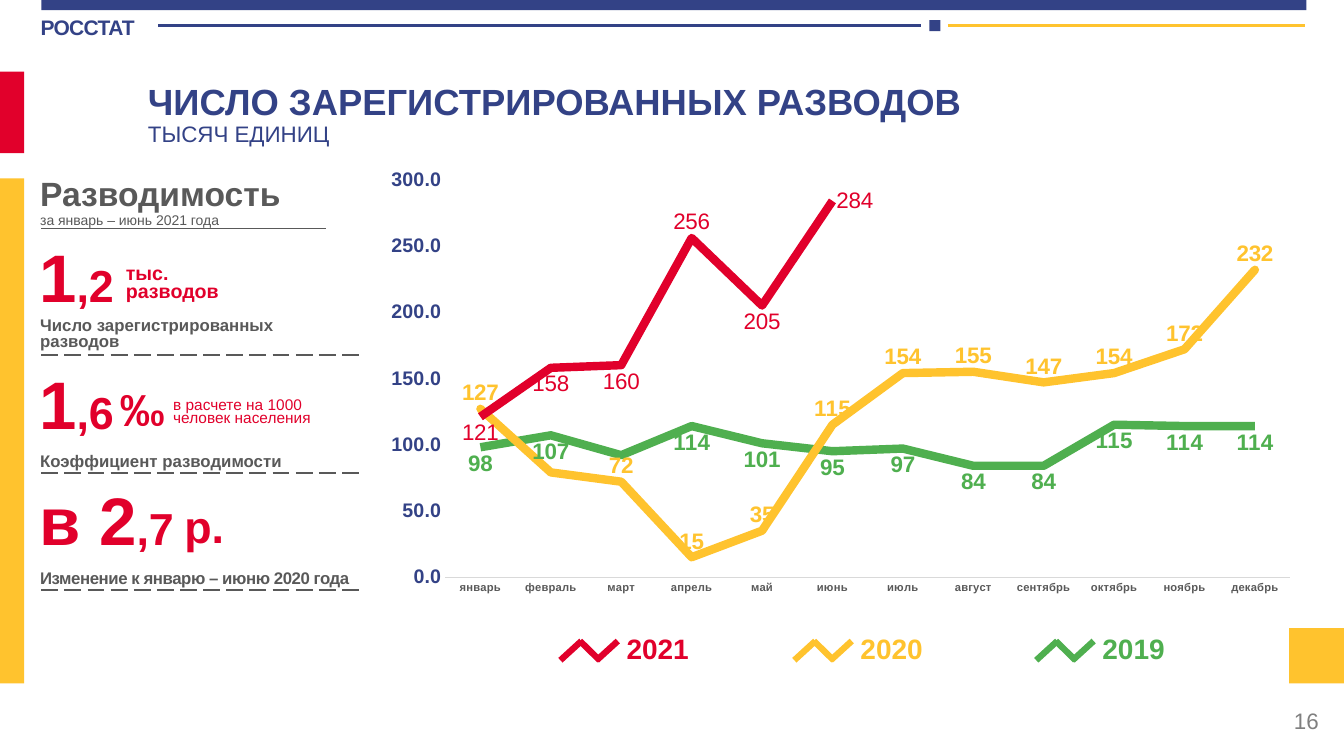
from dataclasses import dataclass

from lxml.etree import SubElement
from pptx import Presentation
from pptx.chart.data import CategoryChartData
from pptx.dml.color import RGBColor
from pptx.enum.chart import XL_CHART_TYPE, XL_LABEL_POSITION, XL_MARKER_STYLE, XL_TICK_MARK
from pptx.enum.dml import MSO_LINE
from pptx.enum.shapes import MSO_CONNECTOR, MSO_SHAPE
from pptx.enum.text import MSO_ANCHOR, PP_ALIGN
from pptx.oxml import parse_xml
from pptx.oxml.ns import nsdecls, qn
from pptx.util import Pt

NAVY = RGBColor(0x33, 0x42, 0x86)
RED = RGBColor(0xE1, 0x00, 0x2B)
GOLD = RGBColor(0xFF, 0xC3, 0x2E)
GREEN = RGBColor(0x4F, 0xAF, 0x4F)
DARK = RGBColor(0x59, 0x59, 0x59)
GREY = RGBColor(0x80, 0x80, 0x80)
PALE = RGBColor(0xD9, 0xD9, 0xD9)
FONT = "Arial"
BELOW, ABOVE, RIGHT = XL_LABEL_POSITION.BELOW, XL_LABEL_POSITION.ABOVE, XL_LABEL_POSITION.RIGHT


@dataclass
class Bar:
    x: float
    y: float
    w: float
    h: float
    color: RGBColor


@dataclass
class Row:
    """One paragraph; tail is a second, smaller run."""
    text: str
    size: float
    color: RGBColor
    bold: bool = True
    space: float = 1
    before: float = 0
    tail: str = ""
    track: int = 0
    align: PP_ALIGN = PP_ALIGN.LEFT


@dataclass
class Note:
    x: float
    y: float
    w: float
    h: float
    rows: list[Row]
    mid: bool = False
    wrap: bool = True
    inset: bool = True


@dataclass
class Year:
    name: str
    values: list
    color: RGBColor
    place: XL_LABEL_POSITION
    left: float
    bold: bool = True
    hidden: int | None = None


MONTHS = ["январь", "февраль", "март", "апрель", "май", "июнь", "июль",
          "август", "сентябрь", "октябрь", "ноябрь", "декабрь"]
YEARS = [
    Year("2019", [98, 107, 92, 114, 101, 95, 97, 84, 84, 115, 114, 114], GREEN, BELOW, 740.2, hidden=2),
    Year("2020", [127, 79, 72, 15, 35, 115, 154, 155, 147, 154, 172, 232], GOLD, ABOVE, 567.4, hidden=1),
    Year("2021", [121, 158, 160, 256, 205, 284] + [None] * 6, RED, BELOW, 400.3, bold=False),
]
MOVED = {3: ABOVE, 5: RIGHT}  # 2021 labels that do not sit below

BARS = [
    Bar(29.5, 0, 903.6, 7.2, NAVY),
    Bar(0, 51.1, 17.3, 58.3, RED),
    Bar(0, 127.4, 17.3, 360.7, GOLD),
    Bar(920.9, 448.6, 39.1, 39.6, GOLD),
    Bar(663.8, 14.4, 7.9, 7.9, NAVY),
]
NOTES = [
    Note(29, 10, 82, 23, [Row("РОССТАТ", 15, NAVY, track=-50)], inset=False),
    Note(733, 500.4, 216, 28.8, [Row("16", 16, GREY, False, align=PP_ALIGN.RIGHT)], mid=True),
    Note(98.6, 52.6, 845.3, 39.6, [
        Row("ЧИСЛО ЗАРЕГИСТРИРОВАННЫХ РАЗВОДОВ", 26, NAVY),
        Row("ТЫСЯЧ ЕДИНИЦ", 16, NAVY, False, 0.3, 10)]),
    Note(21.6, 126, 193, 29.5, [Row("Разводимость", 24, DARK, space=0.8)], mid=True),
    Note(21.6, 147.6, 144, 19.4, [Row("за январь – июнь 2021 года", 10, DARK, False)], wrap=False),
    Note(20.9, 175.7, 138.2, 42.5, [Row("1", 48, RED, tail=",2")], mid=True),
    Note(82.8, 185.8, 82.8, 34.6, [Row("тыс. разводов", 14, RED, space=0.8)]),
    Note(21.6, 224.6, 204.5, 29.5, [Row("Число зарегистрированных разводов", 12, DARK, space=0.8)], mid=True),
    Note(20.9, 266.4, 121.7, 42.5, [Row("1", 48, RED, tail=",6")], mid=True),
    Note(78.5, 269.3, 38.2, 46.1, [Row("‰", 32, RED)]),
    Note(116.6, 282.2, 115.9, 25.9, [Row("в расчете на 1000 человек населения", 11, RED, False, 0.7)]),
    Note(21.6, 321.1, 226.8, 19.4, [Row("Коэффициент разводимости", 12, DARK, space=0.8)], mid=True),
    Note(20.9, 349.2, 121.7, 42.5, [Row("в 2", 48, RED, tail=",7")], mid=True),
    Note(124.6, 352.8, 67, 46.1, [Row("р.", 32, RED)]),
    Note(21.6, 404.6, 249.8, 19.4,
         [Row("Изменение к январю – июню 2020 года", 12, DARK, space=0.8, track=-30)], mid=True),
]


def draw_bar(slide, bar: Bar) -> None:
    shape = slide.shapes.add_shape(MSO_SHAPE.RECTANGLE, Pt(bar.x), Pt(bar.y), Pt(bar.w), Pt(bar.h))
    shape.shadow.inherit = False
    shape.fill.solid()
    shape.fill.fore_color.rgb = bar.color
    shape.line.fill.background()


def draw_line(slide, x1: float, y1: float, x2: float, y2: float,
              color: RGBColor, width: float, dash: bool = False) -> None:
    line = slide.shapes.add_connector(MSO_CONNECTOR.STRAIGHT, Pt(x1), Pt(y1), Pt(x2), Pt(y2))
    line.line.color.rgb = color
    line.line.width = Pt(width)
    if dash:
        line.line.dash_style = MSO_LINE.LONG_DASH
    SubElement(line._element.spPr, qn("a:effectLst"))


def set_font(font, size: float, color: RGBColor, bold: bool) -> None:
    font.name, font.size, font.bold = FONT, Pt(size), bold
    font.color.rgb = color


def draw_note(slide, note: Note) -> None:
    frame = slide.shapes.add_textbox(Pt(note.x), Pt(note.y), Pt(note.w), Pt(note.h)).text_frame
    frame.word_wrap = note.wrap
    frame.vertical_anchor = MSO_ANCHOR.MIDDLE if note.mid else MSO_ANCHOR.TOP
    if not note.inset:
        frame.margin_left = frame.margin_right = frame.margin_top = frame.margin_bottom = 0
    for i, row in enumerate(note.rows):
        para = frame.add_paragraph() if i else frame.paragraphs[0]
        para.alignment = row.align
        para.line_spacing = row.space
        para.space_before = Pt(row.before)
        set_font(para.font, row.size, row.color, row.bold)
        run = para.add_run()
        run.text = row.text
        if row.track:
            run._r.get_or_add_rPr().set("spc", str(row.track))
        if row.tail:
            end = para.add_run()
            end.text = row.tail
            end.font.size = Pt(32)


def draw_key(slide, year: Year) -> None:
    """Draw the zigzag and the name of one year below the chart."""
    low, high = 471.6, 457.9
    for start, end in ((0, 15), (26, 41), (28, 14)):
        draw_line(slide, year.left + start, low, year.left + end, high, year.color, 4.5)
    row = Row(year.name, 20, year.color, align=PP_ALIGN.CENTER)
    draw_note(slide, Note(year.left + 36, 447.8, 67, 31.7, [row]))


def style_year(series, year: Year) -> None:
    series.smooth = False
    series.marker.style = XL_MARKER_STYLE.NONE
    series.format.line.color.rgb = year.color
    series.format.line.width = Pt(6)
    if year.color == GOLD:
        series.format.line._get_or_add_ln().set("cap", "rnd")
    labels = series.data_labels
    labels.show_value = True
    labels.number_format, labels.number_format_is_linked = "0", False
    labels.position = year.place
    set_font(labels.font, 16, year.color, year.bold)
    if year.hidden is not None:
        labels._element.insert(0, parse_xml(
            f'<c:dLbl {nsdecls("c")}><c:idx val="{year.hidden}"/><c:delete val="1"/></c:dLbl>'))


def draw_chart(slide) -> None:
    data = CategoryChartData()
    data.categories = MONTHS
    for year in YEARS:
        data.add_series(year.name, year.values)
    chart = slide.shapes.add_chart(XL_CHART_TYPE.LINE, Pt(257), Pt(118.8), Pt(678.2), Pt(319), data).chart
    chart.has_legend = chart.has_title = False
    chart.font.name, chart.font.size = FONT, Pt(10)
    plot = chart.plots[0]
    plot.vary_by_categories = False
    for series, year in zip(plot.series, YEARS):
        style_year(series, year)
    for i, place in MOVED.items():
        label = plot.series[2].points[i].data_label
        set_font(label.font, 16, RED, False)
        label.position = place

    months, scale = chart.category_axis, chart.value_axis
    for axis, size, color in ((months, 8, DARK), (scale, 14, NAVY)):
        axis.major_tick_mark = axis.minor_tick_mark = XL_TICK_MARK.NONE
        axis.has_major_gridlines = False
        set_font(axis.tick_labels.font, size, color, True)
    months.format.line.color.rgb = PALE
    months.format.line.width = Pt(0.75)
    scale.format.line.fill.background()
    scale.minimum_scale, scale.maximum_scale, scale.major_unit = 0, 300, 50
    scale.tick_labels.number_format = "0.0"
    scale.tick_labels.number_format_is_linked = False

    area = chart._chartSpace.chart.plotArea
    for old in area.findall(qn("c:layout")):
        area.remove(old)
    sizes = "".join(f'<c:{k} val="{v}"/>' for k, v in
                    (("x", 0.09), ("y", 0.03), ("w", 0.89), ("h", 0.89)))
    area.insert(0, parse_xml(
        f'<c:layout {nsdecls("c")}><c:manualLayout><c:layoutTarget val="inner"/>'
        f'<c:xMode val="edge"/><c:yMode val="edge"/>{sizes}</c:manualLayout></c:layout>'))


def main() -> None:
    deck = Presentation()
    deck.slide_width, deck.slide_height = Pt(960), Pt(540)
    slide = deck.slides.add_slide(deck.slide_layouts[6])
    for bar in BARS:
        draw_bar(slide, bar)
    draw_line(slide, 113, 18, 658, 18, NAVY, 2)
    draw_line(slide, 677, 18, 932.4, 18, GOLD, 2)
    draw_chart(slide)
    for year in reversed(YEARS):
        draw_key(slide, year)
    draw_line(slide, 29.5, 163.4, 232.6, 163.4, DARK, 1)
    for y in (253.4, 337.7, 421.2):
        draw_line(slide, 29.5, y, 256.3, y, DARK, 1.5, dash=True)
    for note in NOTES:
        draw_note(slide, note)
    deck.save("out.pptx")


if __name__ == "__main__":
    main()
